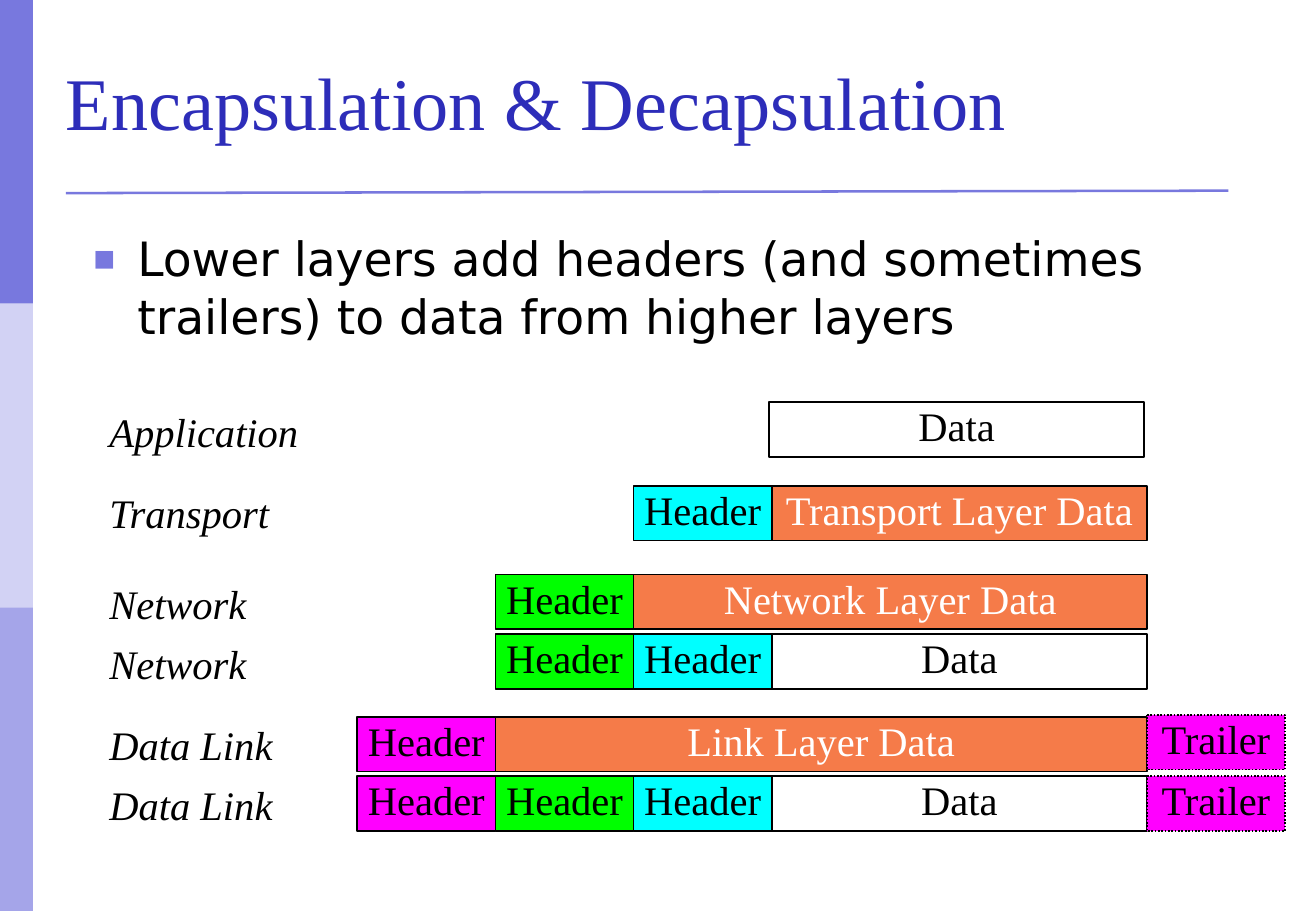
from dataclasses import dataclass

from lxml.etree import SubElement
from pptx import Presentation
from pptx.dml.color import RGBColor
from pptx.enum.dml import MSO_LINE
from pptx.enum.shapes import MSO_CONNECTOR, MSO_SHAPE
from pptx.enum.text import MSO_ANCHOR as Anchor, PP_ALIGN as Align
from pptx.oxml.ns import qn
from pptx.util import Emu, Inches, Pt

WIDTH, HEIGHT = Inches(10.83), Inches(7.5)
SERIF, SANS = "Times New Roman", "DejaVu Sans"
BLACK, WHITE, ORANGE = "000000", "FFFFFF", "F57B49"
CYAN, GREEN, MAGENTA, VIOLET = "00FFFF", "00FF00", "FF00FF", "7878DE"
HEADER_WIDTH, ROW_HEIGHT, LABEL_LEFT = 10.5, 6, 7.4
EDGES = [27.15 + HEADER_WIDTH * i for i in range(4)] + [87.15, 97.65]


@dataclass
class Cell:
    """A packet part between two column edges; shifts are slide percents."""
    text: str
    fill: str | None
    start: int
    end: int
    dx: float = 0
    dy: float = 0
    dotted: bool = False


@dataclass
class Layer:
    """A labelled row; tops are slide percents."""
    label: str
    label_top: float
    top: float
    cells: list[Cell]


DATA = Cell("Data", None, 3, 4)
TRANSPORT = Cell("Header", CYAN, 2, 3)
NETWORK = Cell("Header", GREEN, 1, 2)
LINK = Cell("Header", MAGENTA, 0, 1)
LAYERS = [
    Layer("Application", 44.27, 44.13, [Cell("Data", None, 3, 4, dx=-0.2)]),
    Layer("Transport", 53.07, 53.33,
          [TRANSPORT, Cell("Transport Layer Data", ORANGE, 3, 4)]),
    Layer("Network", 63.07, 63.07,
          [NETWORK, Cell("Network Layer Data", ORANGE, 2, 4)]),
    Layer("Network", 69.73, 69.6, [NETWORK, TRANSPORT, DATA]),
    Layer("Data Link", 78.53, 78.67,
          [LINK, Cell("Link Layer Data", ORANGE, 1, 4),
           Cell("Trailer", MAGENTA, 4, 5, dy=-0.2, dotted=True)]),
    Layer("Data Link", 85.2, 85.2,
          [LINK, NETWORK, TRANSPORT, DATA,
           Cell("Trailer", MAGENTA, 4, 5, dotted=True)]),
]


def rgb(value: str) -> RGBColor:
    """Turn a hex string into a colour."""
    return RGBColor.from_string(value)


def box(left: float, top: float, width: float, height: float) -> list[Emu]:
    """Turn slide percents into lengths."""
    return [Emu(round(share * size / 100)) for share, size in
            ((left, WIDTH), (top, HEIGHT), (width, WIDTH), (height, HEIGHT))]


def assign(target, values: dict) -> None:
    """Set every attribute from a dict."""
    for name, value in values.items():
        setattr(target, name, value)


def write(sp, text: str, color: str, font: dict, para: dict, frame: dict,
          insets: tuple[float, ...]):
    """Write one formatted paragraph and return it."""
    tf = sp.text_frame
    sides = ("margin_left", "margin_top", "margin_right", "margin_bottom")
    assign(tf, dict(zip(sides, map(Inches, insets))) | frame)
    p = tf.paragraphs[0]
    assign(p, para)
    r = p.add_run()
    r.text = text
    assign(r.font, font)
    r.font.color.rgb = rgb(color)
    return p


def place(sp, left: float, top: float, width: float, height: float) -> None:
    """Move a placeholder."""
    assign(sp, dict(zip(("left", "top", "width", "height"),
                        box(left, top, width, height))))


def add_bullet(p) -> None:
    """Give a paragraph a small violet square bullet."""
    pPr = p._p.get_or_add_pPr()
    pPr.set("marL", str(Inches(0.37)))
    pPr.set("indent", str(-Inches(0.37)))
    SubElement(SubElement(pPr, qn("a:buClr")), qn("a:srgbClr")).set("val", VIOLET)
    SubElement(pPr, qn("a:buSzPct")).set("val", "75000")
    SubElement(pPr, qn("a:buFont")).set("typeface", SANS)
    SubElement(pPr, qn("a:buChar")).set("char", "▪")


def add_frame(s) -> None:
    """Draw the side bars and the title rule."""
    for i, color in enumerate((VIOLET, "D2D2F4", "A5A5E9")):
        bar = s.shapes.add_shape(MSO_SHAPE.RECTANGLE,
                                 *box(0, i * 100 / 3, 2.5, 100 / 3))
        bar.shadow.inherit = False
        bar.fill.solid()
        bar.fill.fore_color.rgb = rgb(color)
        bar.line.fill.background()
    rule = s.shapes.add_connector(MSO_CONNECTOR.STRAIGHT,
                                  *box(5, 21.2, 93.35, 20.93))
    rule.line.color.rgb = rgb(VIOLET)
    rule.line.width = Pt(1.5)
    SubElement(rule._element.spPr, qn("a:effectLst"))


def add_cell(s, cell: Cell, top: float) -> None:
    """Draw one packet part."""
    left, right = EDGES[cell.start], EDGES[cell.end]
    sp = s.shapes.add_shape(
        MSO_SHAPE.ROUNDED_RECTANGLE,
        *box(left + cell.dx, top + cell.dy, right - left, ROW_HEIGHT))
    sp.adjustments[0] = 0
    sp.shadow.inherit = False
    if cell.fill:
        sp.fill.solid()
        sp.fill.fore_color.rgb = rgb(cell.fill)
    else:
        sp.fill.background()
    sp.line.color.rgb = rgb(BLACK)
    sp.line.width = Pt(1)
    if cell.dotted:
        sp.line.dash_style = MSO_LINE.ROUND_DOT
    write(sp, cell.text, WHITE if cell.fill == ORANGE else BLACK,
          {"name": SERIF, "size": Pt(24)},
          {"alignment": Align.CENTER, "line_spacing": 0.93},
          {"vertical_anchor": Anchor.BOTTOM, "word_wrap": True},
          (0.05, 0, 0.05, 0.05))


def add_layer(s, layer: Layer) -> None:
    """Draw a row label and its packet parts."""
    label = s.shapes.add_textbox(*box(LABEL_LEFT, layer.label_top, 16.3, 6.3))
    write(label, layer.label, BLACK,
          {"name": SERIF, "size": Pt(24), "italic": True},
          {"line_spacing": 0.93, "alignment": Align.LEFT},
          {"word_wrap": False}, (0.1, 0.07, 0.1, 0.05))
    for cell in layer.cells:
        add_cell(s, cell, layer.top)


def main() -> None:
    """Build and save the slide."""
    prs = Presentation()
    assign(prs, {"slide_width": WIDTH, "slide_height": HEIGHT})
    s = prs.slides.add_slide(prs.slide_layouts[1])
    add_frame(s)
    title, body = s.placeholders
    place(title, 5, 3.6, 89.9, 16.9)
    write(title, "Encapsulation & Decapsulation", "2D2DB9",
          {"name": SERIF, "size": Pt(44)},
          {"alignment": Align.LEFT, "line_spacing": 0.78},
          {"vertical_anchor": Anchor.MIDDLE}, (0, 0, 0, 0))
    place(body, 6.1, 24.4, 84.5, 60)
    p = write(body, "Lower layers add headers (and sometimes trailers) "
              "to data from higher layers", BLACK,
              {"name": SANS, "size": Pt(28)},
              {"line_spacing": 1.02, "space_before": Pt(7)},
              {"vertical_anchor": Anchor.TOP}, (0.1, 0.05, 0.1, 0.05))
    add_bullet(p)
    for layer in LAYERS:
        add_layer(s, layer)
    prs.save("out.pptx")


if __name__ == "__main__":
    main()
